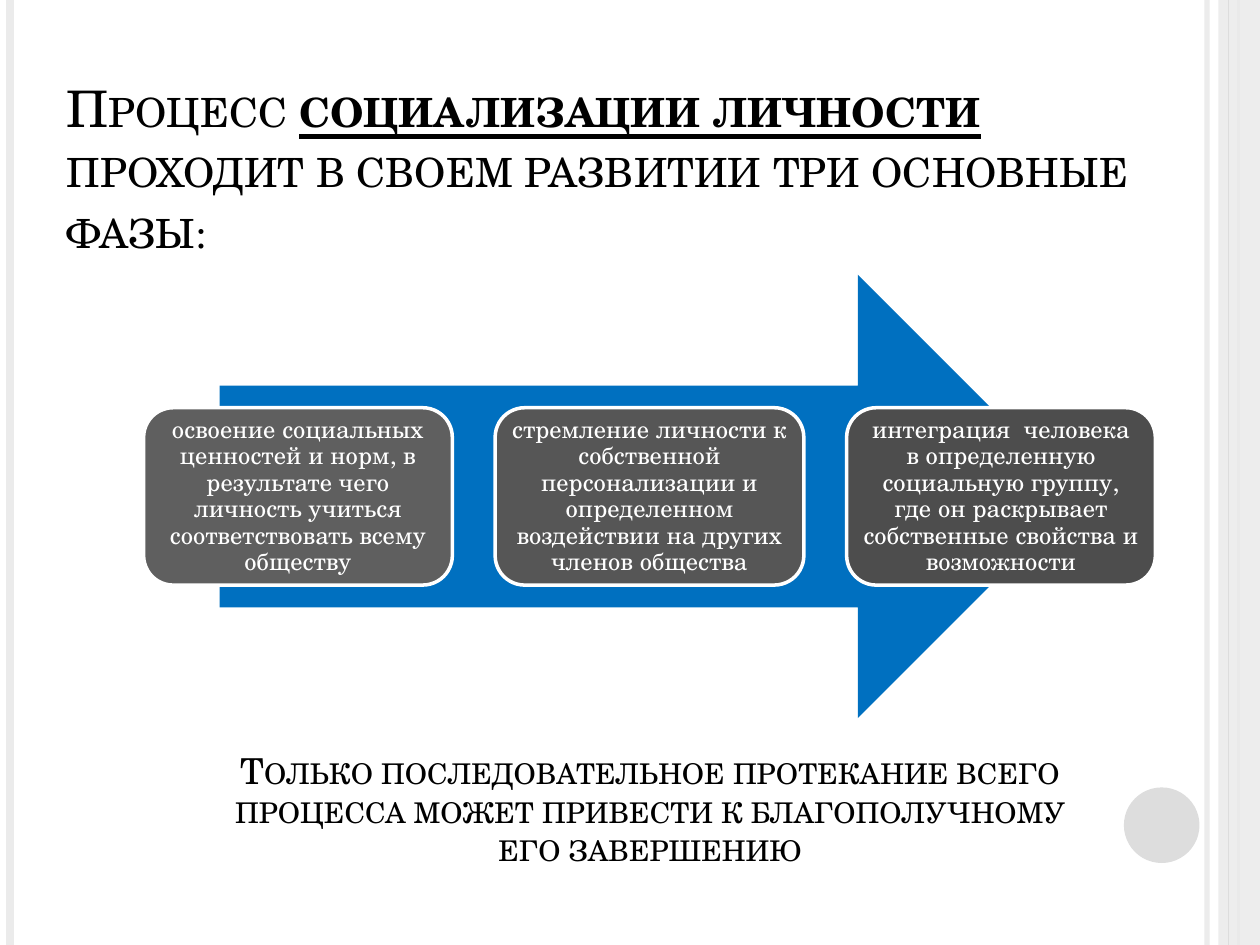
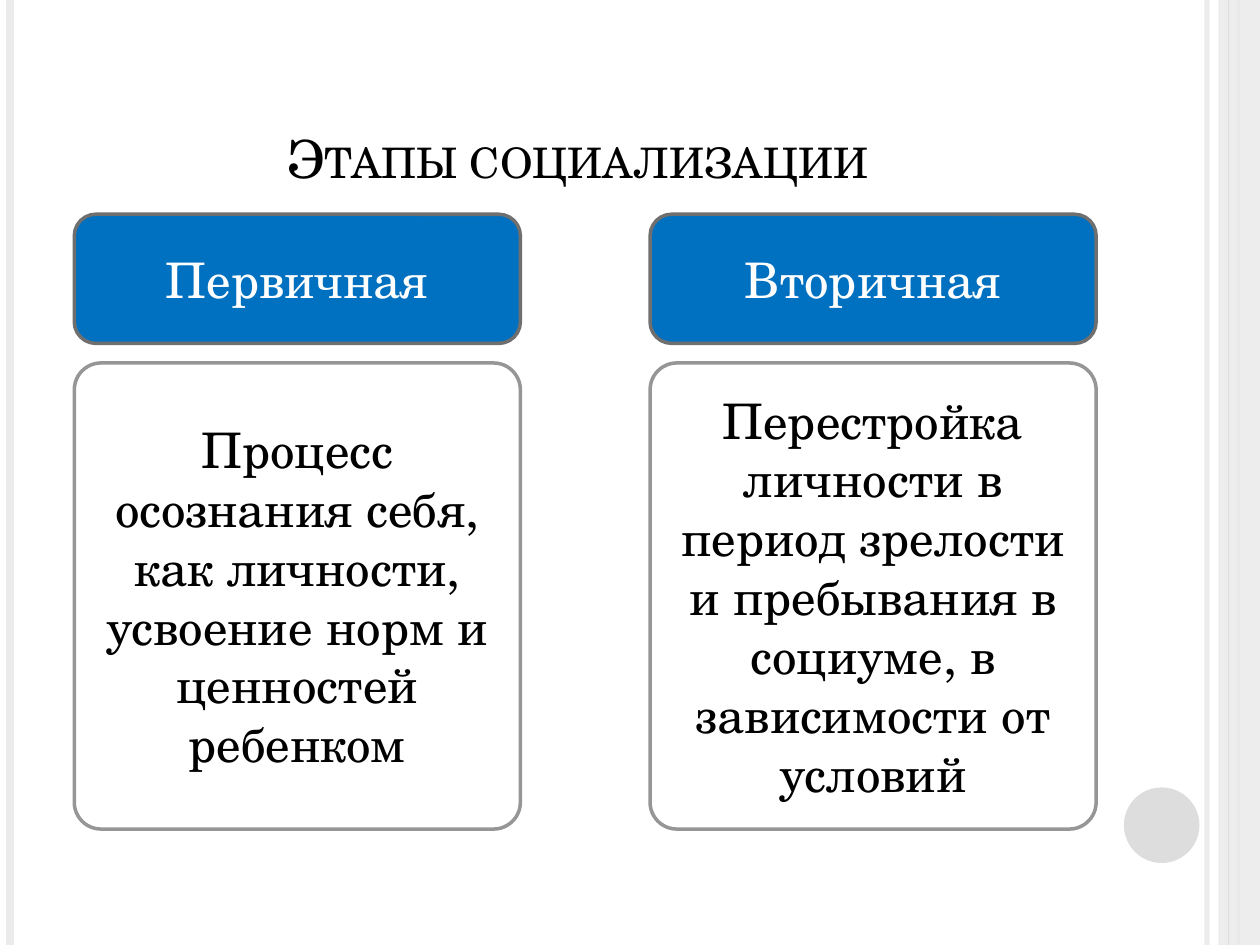
from lxml import etree
from pptx import Presentation
from pptx.dml.color import RGBColor
from pptx.enum.shapes import MSO_CONNECTOR, MSO_SHAPE
from pptx.enum.text import MSO_ANCHOR, MSO_AUTO_SIZE, PP_ALIGN
from pptx.oxml.ns import qn
from pptx.util import Inches, Pt

ROUND, ARROW = MSO_SHAPE.ROUNDED_RECTANGLE, MSO_SHAPE.RIGHT_ARROW
RECT, OVAL = MSO_SHAPE.RECTANGLE, MSO_SHAPE.OVAL
MIDDLE, BOTTOM = MSO_ANCHOR.MIDDLE, MSO_ANCHOR.BOTTOM
LEFT, CENTER = PP_ALIGN.LEFT, PP_ALIGN.CENTER
STRAIGHT = MSO_CONNECTOR.STRAIGHT

FONT = "TeX Gyre Schola"
COLORS = {
    "text": "000000", "light": "FFFFFF", "blue": "0070C0",
    "rail": "EBEBEB", "dot": "DDDDDD", "edge": "6F6F6F", "rim": "969696",
    "step1": "5F5F5F", "step2": "565656", "step3": "4D4D4D",
}
PAGE = (0, 0, Inches(10), Inches(7.5))

PHASES = [
    "освоение социальных ценностей и норм, в результате чего личность "
    "учиться соответствовать всему обществу",
    "стремление личности к собственной персонализации и определенном "
    "воздействии на других членов общества",
    "интеграция  человека в определенную социальную группу, где он "
    "раскрывает собственные свойства и возможности",
]
STAGES = [
    ("Первичная", "Процесс осознания себя, как личности, усвоение норм и "
                  "ценностей ребенком"),
    ("Вторичная", "Перестройка личности в период зрелости и пребывания в "
                  "социуме, в зависимости от условий"),
]


def color(name):
    return RGBColor.from_string(COLORS[name])


def part(box, x, y, w, h):
    """Return the part of a box given in percent of its size."""
    left, top, width, height = box
    return (int(left + width * x / 100), int(top + height * y / 100),
            int(width * w / 100), int(height * h / 100))


def split(box, count, gap):
    """Cut a box into equal columns; gap is in percent of its width."""
    width = (100 - gap * (count - 1)) / count
    return [part(box, i * (width + gap), 0, width, 100) for i in range(count)]


def fade(item, share):
    """Make the first solid colour of a shape partly transparent."""
    tone = item.element.spPr.find(".//" + qn("a:srgbClr"))
    etree.SubElement(tone, qn("a:alpha"), val=str(share * 1000))


def style(item, size, tone="text", align=CENTER, anchor=MIDDLE):
    body = item.text_frame
    body.word_wrap = True
    body.auto_size = MSO_AUTO_SIZE.NONE
    body.vertical_anchor = anchor
    for para in body.paragraphs:
        para.alignment = align
        for run in para.runs:
            run.font.name, run.font.size = FONT, Pt(size)
            run.font.color.rgb = color(tone)


def small_caps(item):
    for props in item.element.iter(qn("a:rPr")):
        props.set("cap", "small")


def shape(slide, kind, box, fill, line=None):
    item = slide.shapes.add_shape(kind, *box)
    item.shadow.inherit = False
    item.fill.solid()
    item.fill.fore_color.rgb = color(fill)
    if line:
        item.line.color.rgb = color(line)
        item.line.width = Pt(2)
    else:
        item.line.fill.background()
    return item


def rail(slide, box, x, tone, width):
    left, top, _, high = part(box, x, 0, 0, 100)
    item = slide.shapes.add_connector(STRAIGHT, left, top, left, top + high)
    item.line.color.rgb = color(tone)
    item.line.width = Pt(width)
    etree.SubElement(item.element.spPr, qn("a:effectLst"))
    return item


def frame(slide, layout, box):
    """Draw the side rails and the dot, and hand them over to the layout."""
    inner = rail(slide, box, 95.8, "rail", 3)
    fade(inner, 93)
    outer = rail(slide, box, 0.8, "rail", 4.5)
    edge = rail(slide, box, 98.3, "dot", 1.5)
    band = shape(slide, RECT, part(box, 96.7, 0, 3.3, 100), "rail")
    fade(band, 87)
    thin = rail(slide, box, 97.5, "dot", 0.75)
    dot = shape(slide, OVAL, part(box, 89.2, 83.33, 6, 8), "dot")
    for item in (inner, outer, edge, band, thin, dot):
        layout.shapes.element.append(item.element)


def title(slide, box, runs, size, align):
    """Fill the title; runs are pairs of text and emphasis."""
    head = slide.shapes.title
    head.left, head.top, head.width, head.height = box
    para = head.text_frame.paragraphs[0]
    for text, strong in runs:
        run = para.add_run()
        run.text = text
        run.font.bold = run.font.underline = strong
    style(head, size, align=align, anchor=BOTTOM)
    small_caps(head)


def flow(slide, box):
    """Draw the wide arrow with the three phases on it."""
    shape(slide, ARROW, part(box, 7.5, 0, 85, 100), "blue")
    cells = split(part(box, 0, 30, 100, 40), len(PHASES), 4.23)
    for i, (cell, text) in enumerate(zip(cells, PHASES), 1):
        card = shape(slide, ROUND, cell, f"step{i}", "light")
        body = card.text_frame
        body.text = text
        body.margin_left = body.margin_right = Inches(0.06)
        body.margin_top = body.margin_bottom = Inches(0.06)
        style(card, 14, "light")
        body.paragraphs[0].line_spacing = 0.9


def note(slide, box):
    item = slide.shapes.add_textbox(*box)
    item.text_frame.text = (
        "Только последовательное протекание всего процесса может "
        "привести к благополучному его завершению")
    style(item, 20.4, anchor=BOTTOM)
    small_caps(item)
    item.text_frame.paragraphs[0].line_spacing = 0.9


def stages(slide, box):
    """Draw one column per stage: a heading above its description."""
    for cell, (name, text) in zip(split(box, len(STAGES), 12.7), STAGES):
        head = shape(slide, ROUND, part(cell, 0, 0, 100, 21), "blue", "edge")
        head.text_frame.text = name
        style(head, 28, "light")
        card = shape(slide, ROUND, part(cell, 0, 24.2, 100, 75.8),
                     "light", "rim")
        card.adjustments[0] = 0.06
        card.text_frame.text = text
        style(card, 28)


def main():
    deck = Presentation()
    deck.slide_width, deck.slide_height = PAGE[2:]
    layout = deck.slide_layouts[5]

    phases = deck.slides.add_slide(layout)
    frame(phases, layout, PAGE)
    title(phases, part(PAGE, 4.3, 8, 87.4, 20), [
        ("Процесс ", False),
        ("социализации личности", True),
        (" проходит в своем развитии три основные фазы:", False),
    ], 28.8, LEFT)
    flow(phases, part(PAGE, 11.4, 29.07, 80.3, 46.93))
    note(phases, part(PAGE, 15.4, 74.13, 72.4, 18.53))

    steps = deck.slides.add_slide(layout)
    title(steps, part(PAGE, 5, 4, 81.7, 16.67),
          [("Этапы социализации", False)], 30, CENTER)
    stages(steps, part(PAGE, 5.9, 22.67, 81.1, 65.07))

    deck.save("out.pptx")


if __name__ == "__main__":
    main()
